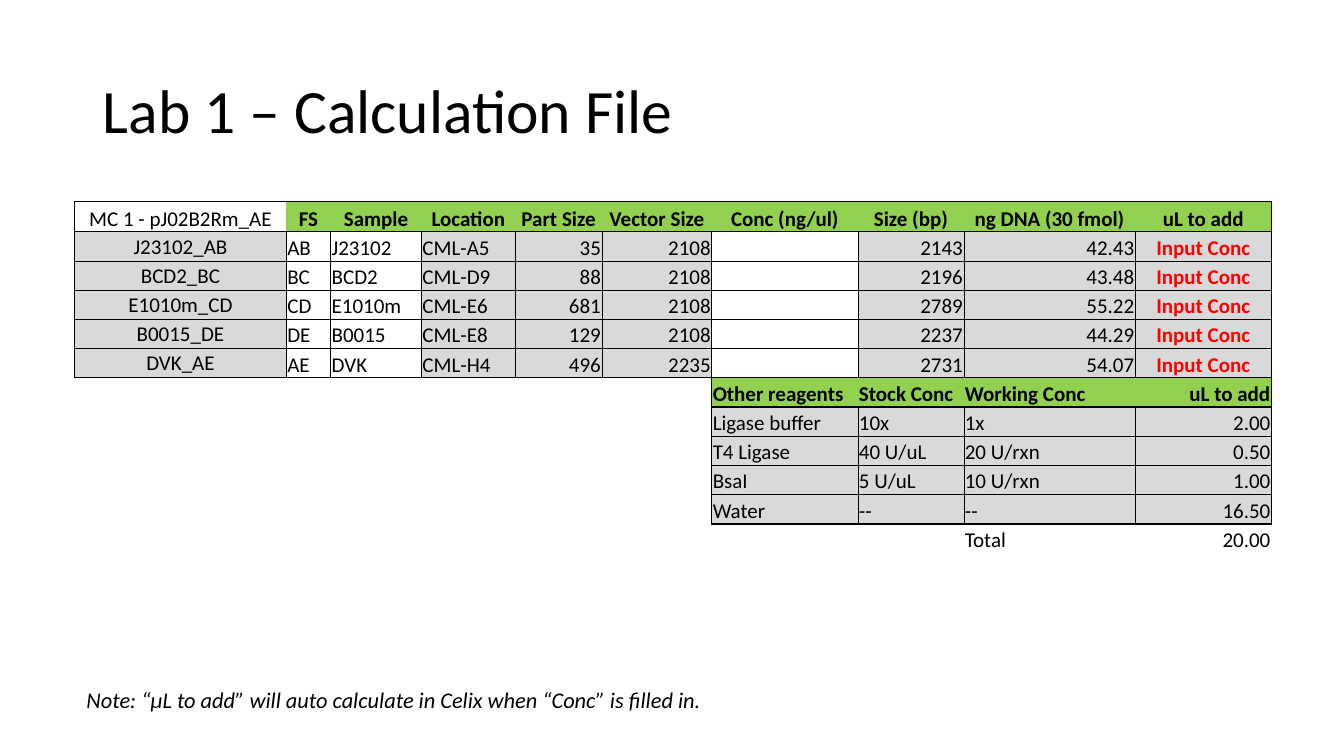
from dataclasses import dataclass

from lxml.etree import SubElement
from pptx import Presentation
from pptx.dml.color import RGBColor as RGB
from pptx.enum.text import MSO_ANCHOR as Anchor, MSO_AUTO_SIZE as AutoSize, PP_ALIGN as Align
from pptx.oxml.ns import qn
from pptx.util import Pt

PX = 9144
NO_STYLE = "{2D5ABB26-0587-4C30-8999-92F81FD0307C}"
ALIGN = {"l": Align.LEFT, "c": Align.CENTER, "r": Align.RIGHT}


@dataclass(frozen=True)
class Theme:
    """Colours, font and type sizes of the slide."""
    font: str = "Calibri"
    ink: str = "000000"
    alert: str = "FF0000"
    header: str = "92D050"
    body: str = "D9D9D9"
    title_size: int = 44
    note_size: int = 16
    cell_size: int = 15
    outer_line: float = 1
    inner_line: float = 0.5


THEME = Theme()
COLUMNS = [210, 44, 90, 93, 86, 109, 145, 105, 170, 135]
ROWS = [30] + [29] * 11
SAMPLES = [
    ["MC 1 - pJ02B2Rm_AE", "FS", "Sample", "Location", "Part Size", "Vector Size",
     "Conc (ng/ul)", "Size (bp)", "ng DNA (30 fmol)", "uL to add"],
    ["J23102_AB", "AB", "J23102", "CML-A5", "35", "2108", "", "2143", "42.43", "Input Conc"],
    ["BCD2_BC", "BC", "BCD2", "CML-D9", "88", "2108", "", "2196", "43.48", "Input Conc"],
    ["E1010m_CD", "CD", "E1010m", "CML-E6", "681", "2108", "", "2789", "55.22", "Input Conc"],
    ["B0015_DE", "DE", "B0015", "CML-E8", "129", "2108", "", "2237", "44.29", "Input Conc"],
    ["DVK_AE", "AE", "DVK", "CML-H4", "496", "2235", "", "2731", "54.07", "Input Conc"],
]
REAGENTS = [
    ["Other reagents", "Stock Conc", "Working Conc", "uL to add"],
    ["Ligase buffer", "10x", "1x", "2.00"],
    ["T4 Ligase", "40 U/uL", "20 U/rxn", "0.50"],
    ["BsaI", "5 U/uL", "10 U/rxn", "1.00"],
    ["Water", "--", "--", "16.50"],
]
TOTAL = ["Total", "20.00"]


def emu(box):
    """Turn px lengths into EMU."""
    return [v * PX for v in box]


def put_text(tf, text, size, color=THEME.ink, bold=False, italic=False, align="l"):
    """Write one formatted paragraph into a text frame."""
    p = tf.paragraphs[0]
    p.alignment = ALIGN[align]
    if not text:
        SubElement(p._p, qn("a:endParaRPr"), sz=str(size * 100))
        return p
    r = p.add_run()
    r.text = text
    f = r.font
    f.name, f.size, f.bold, f.italic = THEME.font, Pt(size), bold, italic
    f.color.rgb = RGB.from_string(color)
    return p


def set_borders(cell, **weights):
    """Draw the sides (L, R, T, B) of a cell, weights in points or None for no line."""
    tcPr = cell._tc.get_or_add_tcPr()
    for side, weight in weights.items():
        ln = SubElement(tcPr, qn(f"a:ln{side}"), w=str(Pt(weight or 0)))
        if weight:
            fill = SubElement(ln, qn("a:solidFill"))
            SubElement(fill, qn("a:srgbClr"), val=THEME.ink)
        else:
            SubElement(ln, qn("a:noFill"))


def add_title(slide, box, text):
    """Place the title placeholder in the box."""
    sp = slide.shapes.title
    sp.left, sp.top, sp.width, sp.height = emu(box)
    tf = sp.text_frame
    tf.auto_size, tf.vertical_anchor = AutoSize.NONE, Anchor.MIDDLE
    put_text(tf, text, THEME.title_size).line_spacing = 0.9


def fill_block(table, top, left, data, aligns, header_align=None, plain=()):
    """Fill an outlined block that has a header row; plain columns stay white."""
    outer, inner = THEME.outer_line, THEME.inner_line
    last_row, last_col = len(data) - 1, len(aligns) - 1
    for i, row in enumerate(data):
        head = i == 0
        between = None if head else inner
        for j, text in enumerate(row):
            cell = table.cell(top + i, left + j)
            set_borders(cell,
                        L=outer if j == 0 else between,
                        R=outer if j == last_col else between,
                        T=outer if i < 2 else inner,
                        B=outer if i in (0, last_row) else inner)
            white = text == SAMPLES[0][0] if head else j in plain
            if not white:
                cell.fill.solid()
                cell.fill.fore_color.rgb = RGB.from_string(THEME.header if head else THEME.body)
            alert = text == "Input Conc"
            put_text(cell.text_frame, text, THEME.cell_size,
                     color=THEME.alert if alert else THEME.ink,
                     bold=alert or head and not white,
                     align=head and header_align or aligns[j])


def add_calculation_table(slide, box):
    """Place the sample and reagent calculations as one table in the box."""
    table = slide.shapes.add_table(len(ROWS), len(COLUMNS), *emu(box)).table
    table.first_row = table.horz_banding = False
    table._tbl.tblPr.find(qn("a:tableStyleId")).text = NO_STYLE
    for column, width in zip(table.columns, COLUMNS):
        column.width = width * PX
    for row, height in zip(table.rows, ROWS):
        row.height = height * PX
    for cell in table.iter_cells():
        cell.margin_left = cell.margin_right = cell.margin_top = PX
        cell.margin_bottom = 0
        cell.vertical_anchor = Anchor.BOTTOM
    for i in range(1, len(SAMPLES)):
        table.cell(i, 0).vertical_anchor = Anchor.MIDDLE

    fill_block(table, 0, 0, SAMPLES, "clllrrrrrc", header_align="c", plain=(1, 2, 6))
    reagent_col = len(COLUMNS) - len(REAGENTS[0])
    fill_block(table, len(SAMPLES), reagent_col, REAGENTS, "lllr")
    total_row, total_col = len(ROWS) - 1, len(COLUMNS) - len(TOTAL)
    for j, (text, align) in enumerate(zip(TOTAL, "lr")):
        put_text(table.cell(total_row, total_col + j).text_frame, text, THEME.cell_size, align=align)
    for cell in table.iter_cells():
        if not cell.text and cell.text_frame.paragraphs[0]._p.find(qn("a:endParaRPr")) is None:
            put_text(cell.text_frame, "", THEME.cell_size)


def add_note(slide, box, text):
    """Place the italic note in the box."""
    tf = slide.shapes.add_textbox(*emu(box)).text_frame
    tf.word_wrap, tf.auto_size = True, AutoSize.SHAPE_TO_FIT_TEXT
    put_text(tf, text, THEME.note_size, italic=True)


def main():
    """Build and save the slide."""
    prs = Presentation()
    prs.slide_width, prs.slide_height = emu((1333, 750))
    slide = prs.slides.add_slide(prs.slide_layouts.get_by_name("Title Only"))
    add_title(slide, (92, 40, 1150, 145), "Lab 1 – Calculation File")
    add_calculation_table(slide, (74, 200, sum(COLUMNS), sum(ROWS)))
    add_note(slide, (76, 676, 830, 37),
             "Note: “µL to add” will auto calculate in Celix when “Conc” is filled in.")
    prs.save("out.pptx")


if __name__ == "__main__":
    main()
